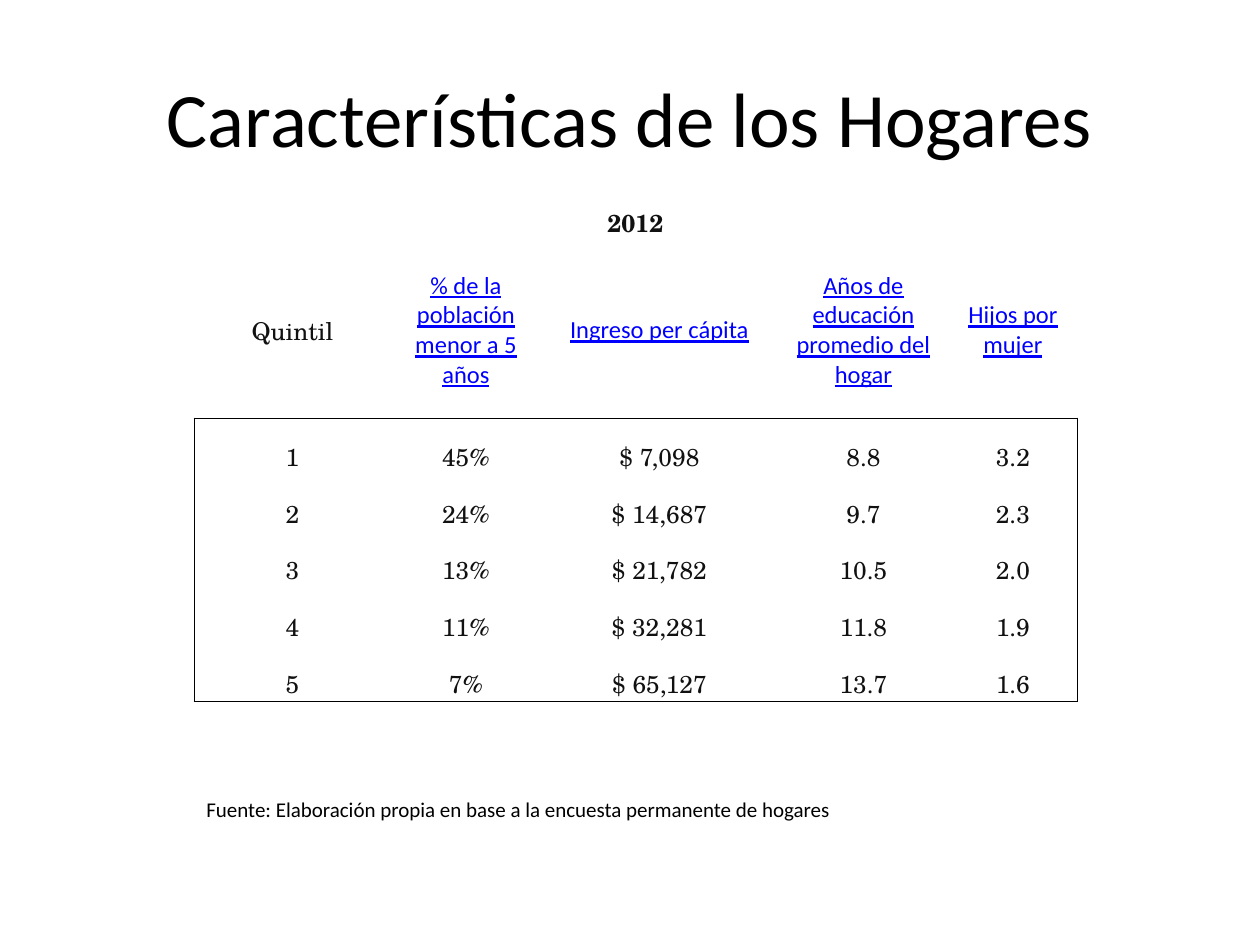
from dataclasses import dataclass

from lxml import etree
from pptx import Presentation
from pptx.dml.color import RGBColor
from pptx.enum.text import MSO_ANCHOR, PP_ALIGN
from pptx.oxml.ns import qn
from pptx.util import Emu, Pt

CENTER, LEFT = PP_ALIGN.CENTER, PP_ALIGN.LEFT
MIDDLE, BOTTOM, TOP = MSO_ANCHOR.MIDDLE, MSO_ANCHOR.BOTTOM, MSO_ANCHOR.TOP
SCALE = 914400 // 126  # EMU in one px


@dataclass(frozen=True)
class Theme:
    sans: str = "Calibri"
    serif: str = "TeX Gyre Schola"
    black: str = "000000"
    ink: str = "111111"
    link: str = "0000FF"
    paper: str = "FFFFFF"
    title: int = 44
    body: int = 14
    note: int = 12
    rule: float = 0.5


THEME = Theme()

YEAR = "2012"
HEADS = ["Quintil", "% de la población menor a 5 años", "Ingreso per cápita",
         "Años de educación promedio del hogar", "Hijos por mujer"]
DATA = [
    ["1", "45%", "$ 7,098", "8.8", "3.2"],
    ["2", "24%", "$ 14,687", "9.7", "2.3"],
    ["3", "13%", "$ 21,782", "10.5", "2.0"],
    ["4", "11%", "$ 32,281", "11.8", "1.9"],
    ["5", "7%", "$ 65,127", "13.7", "1.6"],
]
COLS = [197, 150, 237, 171, 128]
ROWS = [57, 176, 57, 57, 56, 57, 57]


def px(n):
    return Emu(n * SCALE)


def add_run(frame, text, size, font, color, align, bold=False, line=False):
    para = frame.paragraphs[0]
    para.alignment = align
    run = para.add_run()
    run.text = text
    run.font.size = Pt(size)
    run.font.name = font
    run.font.bold = bold
    run.font.underline = line
    run.font.color.rgb = RGBColor.from_string(color)


def add_label(slide, box, text, size, align, anchor, wrap):
    frame = slide.shapes.add_textbox(*map(px, box)).text_frame
    frame.word_wrap = wrap
    frame.vertical_anchor = anchor
    add_run(frame, text, size, THEME.sans, THEME.black, align)


def set_edges(cell, edges):
    """Rule the given sides (L, R, T, B) and clear the others."""
    props = cell._tc.get_or_add_tcPr()
    for pos, side in enumerate("LRTB"):
        line = etree.Element(qn(f"a:ln{side}"), w=str(Pt(THEME.rule)))
        if side in edges:
            fill = etree.SubElement(line, qn("a:solidFill"))
            etree.SubElement(fill, qn("a:srgbClr"), val=THEME.black)
        else:
            etree.SubElement(line, qn("a:noFill"))
        props.insert(pos, line)


def set_cell(cell, text, anchor, edges="", font=THEME.serif,
             color=THEME.ink, bold=False, line=False):
    cell.margin_left = cell.margin_right = cell.margin_top = px(1)
    cell.margin_bottom = 0
    cell.vertical_anchor = anchor
    cell.fill.solid()
    cell.fill.fore_color.rgb = RGBColor.from_string(THEME.paper)
    set_edges(cell, edges)
    add_run(cell.text_frame, text, THEME.body, font, color, CENTER, bold, line)


def add_grid(slide, left, top):
    shape = slide.shapes.add_table(len(ROWS), len(COLS), px(left), px(top),
                                   px(sum(COLS)), px(sum(ROWS)))
    table = shape.table
    table.first_row = table.horz_banding = False
    for col, width in zip(table.columns, COLS):
        col.width = px(width)
    for row, height in zip(table.rows, ROWS):
        row.height = px(height)

    # Year across the top
    table.cell(0, 0).merge(table.cell(0, len(COLS) - 1))
    set_cell(table.cell(0, 0), YEAR, BOTTOM, bold=True)

    # Column heads: all but the first look like links
    for c, text in enumerate(HEADS):
        look = dict(font=THEME.sans, color=THEME.link, line=True) if c else {}
        set_cell(table.cell(1, c), text, MIDDLE, "B", **look)

    # Values, framed by one outer rule
    for r, values in enumerate(DATA):
        for c, text in enumerate(values):
            sides = {"L": c == 0, "R": c == len(COLS) - 1,
                     "T": r == 0, "B": r == len(DATA) - 1}
            edges = [side for side, on in sides.items() if on]
            set_cell(table.cell(r + 2, c), text, BOTTOM, edges)


def main():
    deck = Presentation()
    deck.slide_width, deck.slide_height = px(1260), px(945)
    slide = deck.slides.add_slide(deck.slide_layouts[6])

    # Title
    add_label(slide, (63, 38, 1134, 157), "Características de los Hogares",
              THEME.title, CENTER, MIDDLE, True)
    # Table
    add_grid(slide, 194, 185)
    # Source note
    add_label(slide, (194, 790, 656, 38),
              "Fuente: Elaboración propia en base a la encuesta permanente de hogares",
              THEME.note, LEFT, TOP, False)

    deck.save("out.pptx")


if __name__ == "__main__":
    main()
